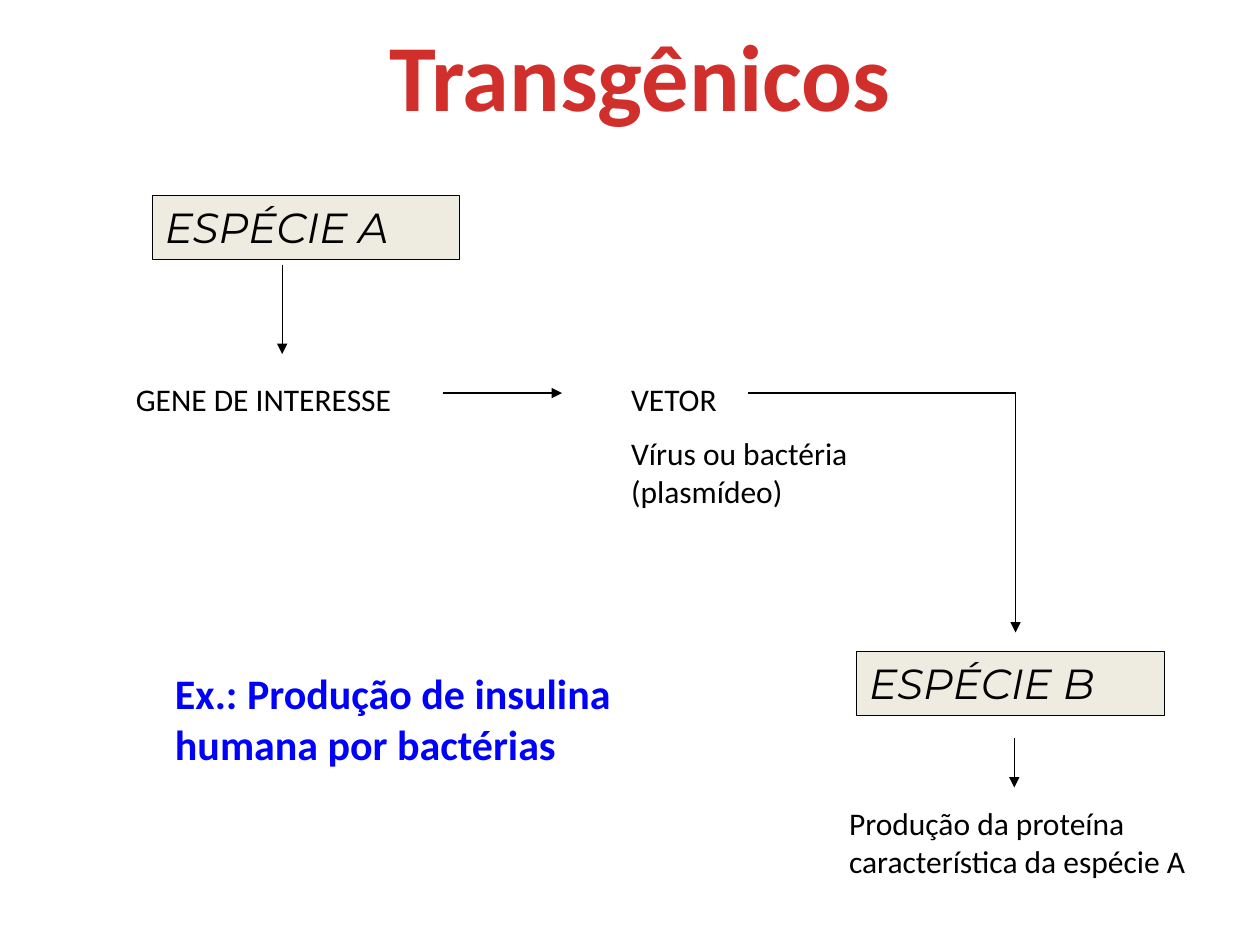
from lxml.etree import SubElement as Sub
from pptx import Presentation
from pptx.dml.color import RGBColor
from pptx.enum.shapes import MSO_CONNECTOR as Link, MSO_SHAPE as Form
from pptx.enum.text import MSO_ANCHOR as Anchor, MSO_AUTO_SIZE as Fit, PP_ALIGN as Align
from pptx.oxml.ns import qn
from pptx.util import Inches, Pt

BLACK = "000000"


def paint(color, code):
    """Set a colour format from a hex string."""
    color.rgb = RGBColor.from_string(code)


def place(shape, box):
    """Move a shape to a box given in inches."""
    shape.left, shape.top, shape.width, shape.height = map(Inches, box)


def write(shape, lines, size, code=BLACK, face="Calibri", bold=False, slant=False,
          align=Align.LEFT, anchor=Anchor.TOP, wrap=True):
    """Fill a shape with formatted paragraphs."""
    frame = shape.text_frame
    frame.text = "\n".join(lines)
    frame.word_wrap = wrap
    frame.auto_size = Fit.NONE
    frame.vertical_anchor = anchor
    for row, para in enumerate(frame.paragraphs):
        para.alignment = align
        if row:
            para.space_before = Pt(size / 2)
        for run in para.runs:
            font = run.font
            font.name, font.size = face, Pt(size)
            font.bold, font.italic = bold, slant
            paint(font.color, code)


def add_title(slide, box, text):
    """Place the slide title."""
    title = slide.shapes.title
    place(title, box)
    write(title, [text], 54, "D02F2C", bold=True, align=Align.CENTER,
          anchor=Anchor.MIDDLE, wrap=False)


def add_note(slide, box, lines, size=18, **style):
    """Place a plain text box."""
    note = slide.shapes.add_textbox(*map(Inches, box))
    write(note, lines, size, **style)


def add_species(slide, box, text):
    """Place a framed species name."""
    card = slide.shapes.add_shape(Form.RECTANGLE, *map(Inches, box))
    card.shadow.inherit = False
    card.fill.solid()
    paint(card.fill.fore_color, "EEECE1")
    paint(card.line.color, BLACK)
    card.line.width = Pt(0.75)
    write(card, [text], 24, face="Montserrat", slant=True)


def add_line(slide, start, end, arrow=True):
    """Draw a thin line, with an arrowhead at its end if asked."""
    line = slide.shapes.add_connector(Link.STRAIGHT, *map(Inches, start + end))
    paint(line.line.color, BLACK)
    line.line.width = Pt(0.75)
    if arrow:
        Sub(line.line._get_or_add_ln(), qn("a:tailEnd"), type="triangle")
    Sub(line._element.spPr, qn("a:effectLst"))


def add_flow(slide):
    """Lay out the path of the gene from species A to species B."""
    size, flow, bend = (2.44, 0.51), 3.12, 8.06
    add_species(slide, (1.21, 1.55) + size, "ESPÉCIE A")
    add_line(slide, (2.24, 2.1), (2.24, 2.81))
    add_note(slide, (0.98, 2.97, 2.84, 0.4), ["GENE DE INTERESSE"])
    add_line(slide, (3.52, flow), (4.46, flow))
    add_note(slide, (4.91, 2.97, 2.05, 1.45), ["VETOR", "Vírus ou bactéria (plasmídeo)"])
    add_line(slide, (5.94, flow), (bend, flow), arrow=False)
    add_line(slide, (bend, flow), (bend, 5.02))
    add_species(slide, (6.8, 5.17) + size, "ESPÉCIE B")
    add_line(slide, (8.05, 5.86), (8.05, 6.25))
    add_note(slide, (6.64, 6.33, 3.05, 0.7),
             ["Produção da proteína característica da espécie A"])


def main():
    """Build and save the slide."""
    deck = Presentation()
    deck.slide_width, deck.slide_height = Inches(10), Inches(7.5)
    slide = deck.slides.add_slide(deck.slide_layouts[5])
    add_title(slide, (2.97, 0.08, 4.22, 1.01), "Transgênicos")
    add_flow(slide)
    add_note(slide, (1.29, 5.25, 4.41, 0.9),
             ["Ex.: Produção de insulina humana por bactérias"],
             24, code="0000FF", bold=True)
    deck.save("out.pptx")


if __name__ == "__main__":
    main()
